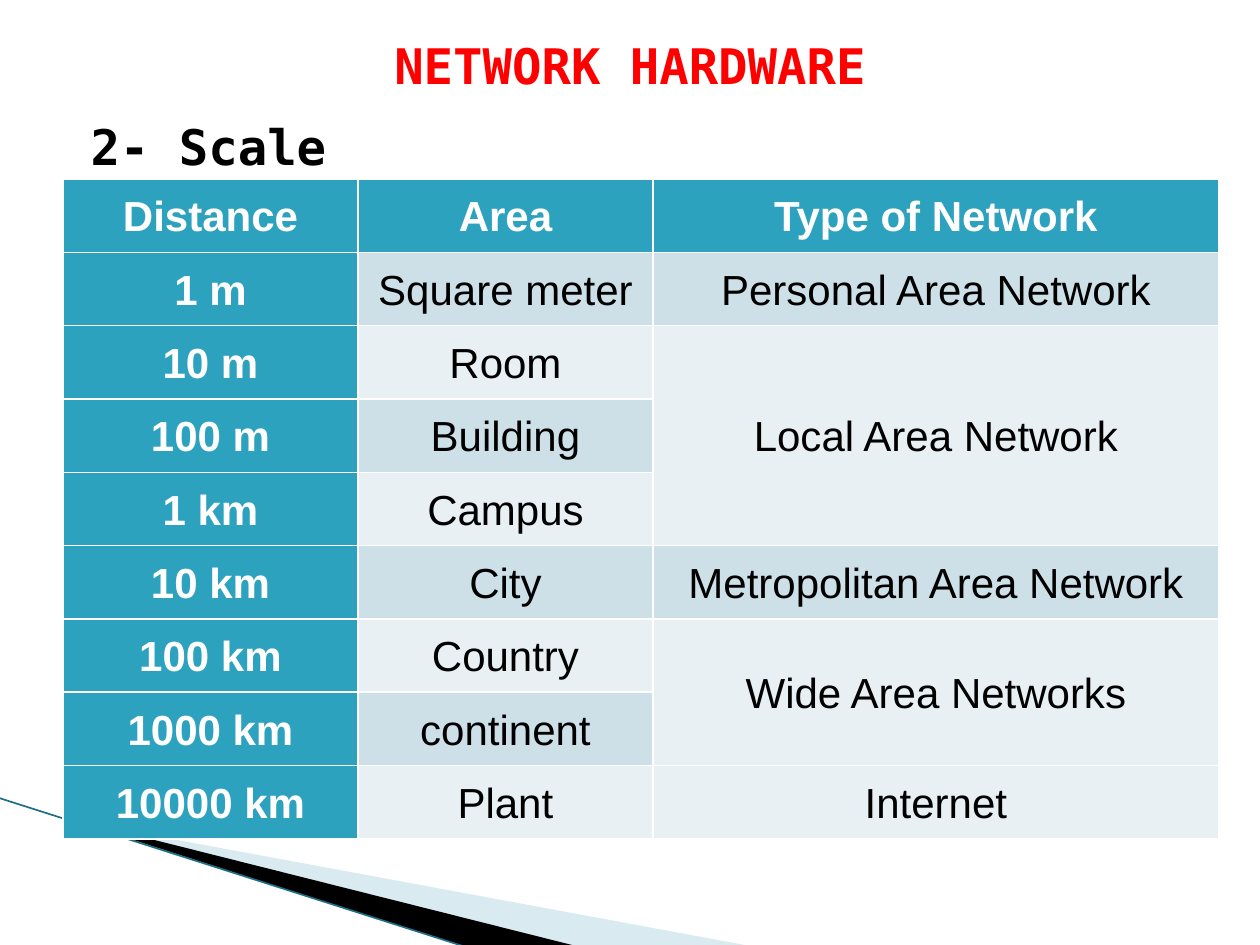
from dataclasses import dataclass

from lxml import etree
from pptx import Presentation
from pptx.dml.color import RGBColor
from pptx.enum.shapes import MSO_CONNECTOR
from pptx.enum.text import MSO_ANCHOR, MSO_AUTO_SIZE, PP_ALIGN
from pptx.oxml.ns import qn
from pptx.util import Pt

CENTER, JUSTIFY = PP_ALIGN.CENTER, PP_ALIGN.JUSTIFY
TOP, MIDDLE = MSO_ANCHOR.TOP, MSO_ANCHOR.MIDDLE
NO_AUTOFIT = MSO_AUTO_SIZE.NONE
STRAIGHT = MSO_CONNECTOR.STRAIGHT
EMU_PER_PX = 914400 / 126


@dataclass(frozen=True)
class Theme:
    title: str = "FF0000"
    ink: str = "000000"
    white: str = "FFFFFF"
    teal: str = "2DA2BF"
    odd_row: str = "CDE0E8"
    even_row: str = "E8F0F4"
    pale_wedge: str = "A0CBDC"
    edge_line: str = "1C6F84"
    heading_font: str = "DejaVu Sans Mono"
    table_font: str = "Arial"
    heading_size: int = 28
    table_size: int = 24


@dataclass(frozen=True)
class Box:
    left: int
    top: int
    width: int
    height: int


@dataclass(frozen=True)
class Wedge:
    points: tuple[tuple[int, int], ...]
    color: str
    opacity: int = 100


@dataclass(frozen=True)
class NetworkScale:
    distance: str
    area: str
    network: str
    rows_spanned: int = 1


THEME = Theme()

WEDGES = (
    Wedge(((69, 820), (750, 946), (575, 946), (69, 819)), THEME.pale_wedge, 40),
    Wedge(((67, 818), (576, 946), (469, 948), (68, 819)), THEME.ink),
)

TABLE_BOX = Box(63, 179, 1156, 660)
COLUMN_WIDTHS = (295, 295, 566)
SCALES = (
    NetworkScale("Distance", "Area", "Type of Network"),
    NetworkScale("1 m", "Square meter", "Personal Area Network"),
    NetworkScale("10 m", "Room", "Local Area Network", 3),
    NetworkScale("100 m", "Building", ""),
    NetworkScale("1 km", "Campus", ""),
    NetworkScale("10 km", "City", "Metropolitan Area Network"),
    NetworkScale("100 km", "Country", "Wide Area Networks", 2),
    NetworkScale("1000 km", "continent", ""),
    NetworkScale("10000 km", "Plant", "Internet"),
)


def px(length: int) -> int:
    return round(length * EMU_PER_PX)


def style_runs(paragraph, font_name: str, size: int, color: str, bold: bool) -> None:
    for run in paragraph.runs:
        run.font.name = font_name
        run.font.size = Pt(size)
        run.font.bold = bold
        run.font.color.rgb = RGBColor.from_string(color)


def fill_heading(shape, box: Box, text: str, color: str, alignment, anchor):
    shape.left, shape.top = px(box.left), px(box.top)
    shape.width, shape.height = px(box.width), px(box.height)
    frame = shape.text_frame
    frame.text = text
    frame.word_wrap = True
    frame.auto_size = NO_AUTOFIT
    frame.vertical_anchor = anchor
    paragraph = frame.paragraphs[0]
    paragraph.alignment = alignment
    paragraph.space_before = Pt(0)
    style_runs(paragraph, THEME.heading_font, THEME.heading_size, color, True)
    return shape


def remove_bullet(paragraph, indent: int) -> None:
    properties = paragraph._p.get_or_add_pPr()
    properties.set("marL", str(px(indent)))
    properties.set("indent", "0")
    etree.SubElement(properties, qn("a:buNone"))


def draw_wedge(slide, wedge: Wedge) -> None:
    start, *others = wedge.points
    builder = slide.shapes.build_freeform(*start, scale=EMU_PER_PX)
    builder.add_line_segments(others, close=True)
    shape = builder.convert_to_shape()
    shape.shadow.inherit = False
    shape.line.fill.background()
    shape.fill.solid()
    shape.fill.fore_color.rgb = RGBColor.from_string(wedge.color)
    if wedge.opacity < 100:
        color = shape._element.spPr.find(qn("a:solidFill"))[0]
        etree.SubElement(color, qn("a:alpha"), val=str(wedge.opacity * 1000))


def draw_edge_line(slide) -> None:
    line = slide.shapes.add_connector(STRAIGHT, px(-1), px(798), px(469), px(948))
    line.line.color.rgb = RGBColor.from_string(THEME.edge_line)
    line.line.width = Pt(0.95)
    etree.SubElement(line._element.spPr, qn("a:effectLst"))


def fill_cell(cell, text: str, fill: str, heading: bool) -> None:
    cell.fill.solid()
    cell.fill.fore_color.rgb = RGBColor.from_string(fill)
    cell.vertical_anchor = MIDDLE
    cell.margin_left = cell.margin_right = px(9)
    cell.margin_top = cell.margin_bottom = 0
    cell.text_frame.text = text
    paragraph = cell.text_frame.paragraphs[0]
    paragraph.alignment = CENTER
    paragraph.line_spacing = 1.07
    color = THEME.white if heading else THEME.ink
    style_runs(paragraph, THEME.table_font, THEME.table_size, color, heading)


def draw_scale_table(slide, box: Box) -> None:
    table = slide.shapes.add_table(
        len(SCALES), len(COLUMN_WIDTHS),
        px(box.left), px(box.top), px(box.width), px(box.height),
    ).table
    table.horz_banding = False
    for column, width in zip(table.columns, COLUMN_WIDTHS):
        column.width = px(width)
    for row, scale in enumerate(SCALES):
        band = THEME.odd_row if row % 2 else THEME.even_row
        for column, text in enumerate((scale.distance, scale.area, scale.network)):
            heading = row == 0 or column == 0
            fill_cell(table.cell(row, column), text, THEME.teal if heading else band, heading)
    for row, scale in enumerate(SCALES):
        if scale.rows_spanned > 1:
            table.cell(row, 2).merge(table.cell(row + scale.rows_spanned - 1, 2))


def main() -> None:
    presentation = Presentation()
    presentation.slide_width, presentation.slide_height = px(1260), px(945)
    slide = presentation.slides.add_slide(presentation.slide_layouts[1])
    fill_heading(slide.shapes.title, Box(63, 16, 1134, 98),
                 "NETWORK HARDWARE", THEME.title, CENTER, MIDDLE)
    subtitle = fill_heading(slide.placeholders[1], Box(63, 105, 1134, 73),
                            "2- Scale", THEME.ink, JUSTIFY, TOP)
    subtitle.text_frame.margin_top = px(11)
    remove_bullet(subtitle.text_frame.paragraphs[0], 15)
    for wedge in WEDGES:
        draw_wedge(slide, wedge)
    draw_edge_line(slide)
    draw_scale_table(slide, TABLE_BOX)
    presentation.save("out.pptx")


if __name__ == "__main__":
    main()
